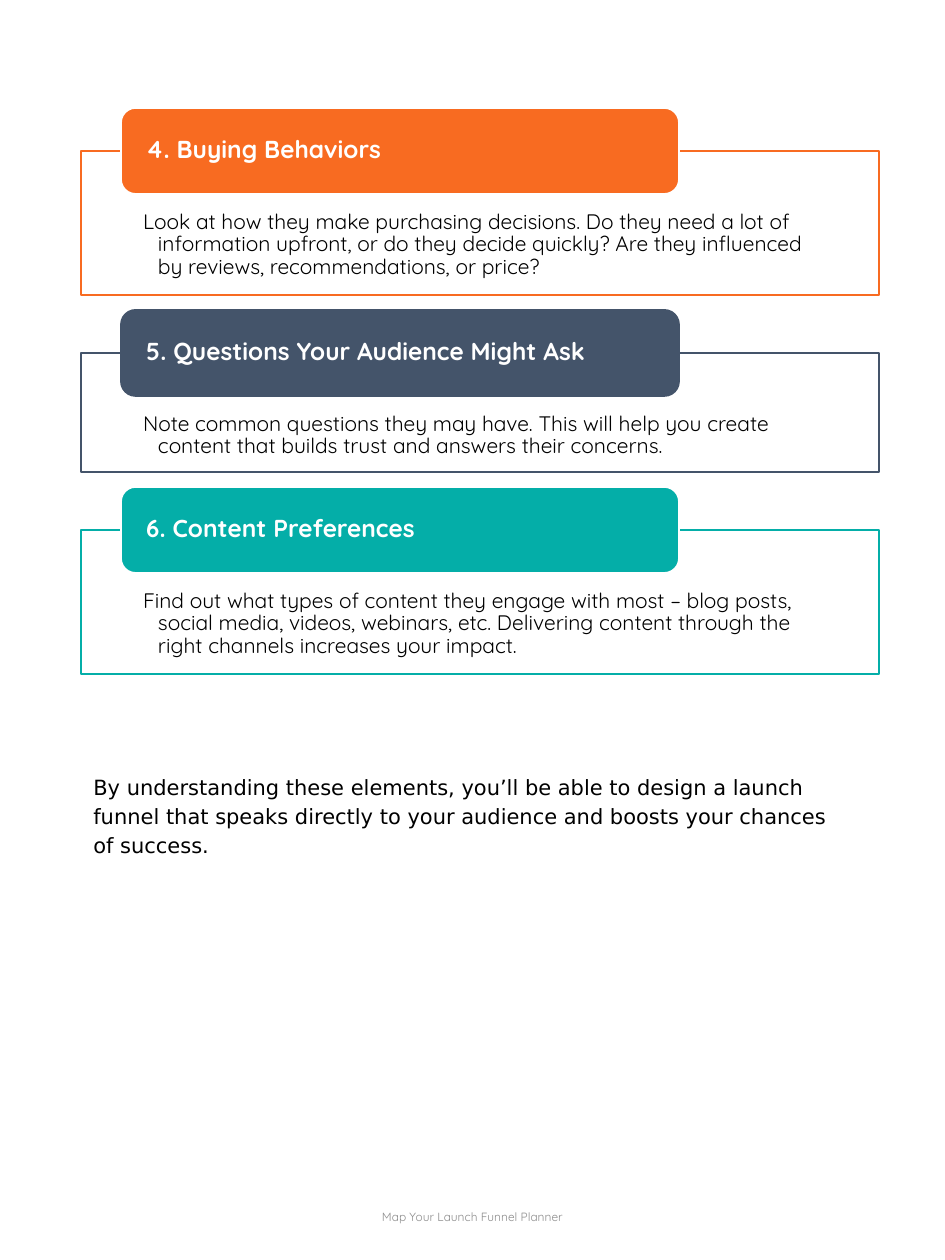
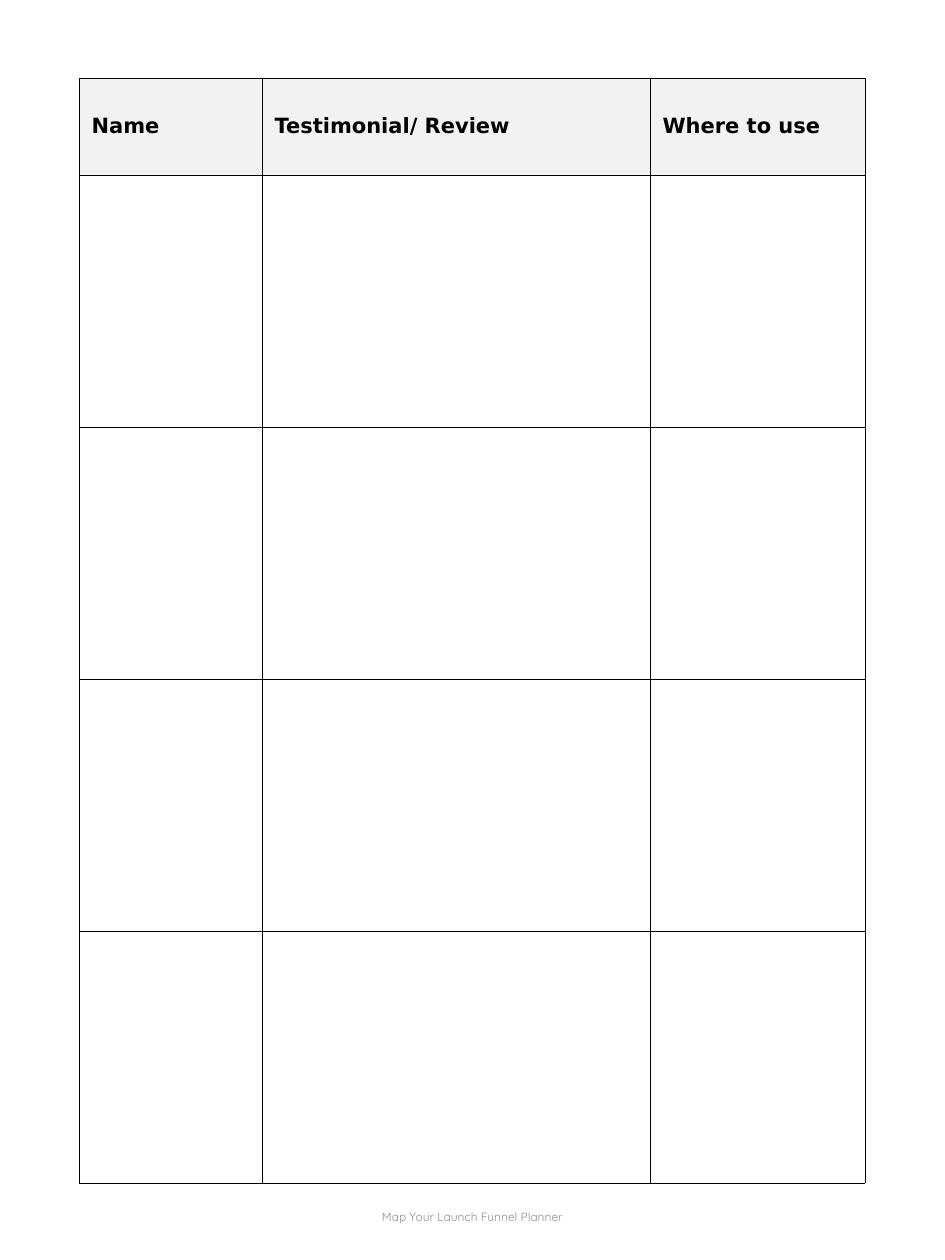
"""Build two pages of a launch funnel planner: audience cards and a testimonial table."""
from dataclasses import dataclass

from lxml.etree import SubElement
from pptx import Presentation
from pptx.dml.color import RGBColor
from pptx.enum.shapes import MSO_SHAPE as Shape
from pptx.enum.text import MSO_ANCHOR as Anchor, MSO_AUTO_SIZE as AutoSize, PP_ALIGN as Align
from pptx.oxml.ns import qn
from pptx.util import Pt


@dataclass(frozen=True)
class Theme:
    black: str = "000000"
    white: str = "FFFFFF"
    footer: str = "8C8C8C"
    header: str = "F2F2F2"
    orange: str = "F86B21"
    navy: str = "44546A"
    teal: str = "04AEA8"
    card_font: str = "Quicksand"
    page_font: str = "DejaVu Sans"
    title_size: float = 14
    body_size: float = 12
    footer_size: float = 6.8


theme = Theme()
rgb = RGBColor.from_string


def px(*lengths):
    """Turn pixel lengths (126 to the inch) into EMU."""
    return [round(length * 914400 / 126) for length in lengths]


def write(frame, text, size, font, color, bold=False, align=Align.LEFT, anchor=Anchor.TOP, insets=None):
    """Fill a text frame with one styled paragraph and return the paragraph."""
    frame.word_wrap = True
    frame.vertical_anchor = anchor
    if insets:
        frame.margin_left, frame.margin_top, frame.margin_right, frame.margin_bottom = px(*insets)
    paragraph = frame.paragraphs[0]
    paragraph.text = text
    paragraph.alignment = align
    paragraph.font.size = Pt(size)
    paragraph.font.name = font
    paragraph.font.bold = bold
    paragraph.font.color.rgb = rgb(color)
    return paragraph


presentation = Presentation()
presentation.slide_width, presentation.slide_height = px(945, 1260)
blank = presentation.slide_layouts[6]
audience_slide, testimonial_slide = [presentation.slides.add_slide(blank) for _ in range(2)]

for slide in (audience_slide, testimonial_slide):
    footer = slide.shapes.add_textbox(*px(313, 1183, 319, 67))
    write(footer.text_frame, "Map Your Launch Funnel Planner", theme.footer_size, theme.card_font,
          theme.footer, align=Align.CENTER, anchor=Anchor.MIDDLE)

cards = [
    ("4. Buying Behaviors",
     "Look at how they make purchasing decisions. Do they need a lot of information upfront, "
     "or do they decide quickly? Are they influenced by reviews, recommendations, or price?",
     144, theme.orange, theme.white),
    ("5. Questions Your Audience Might Ask",
     "Note common questions they may have. This will help you create content that builds trust "
     "and answers their concerns.",
     119, theme.navy, theme.navy),
    ("6. Content Preferences",
     "Find out what types of content they engage with most – blog posts, social media, videos, "
     "webinars, etc. Delivering content through the right channels increases your impact.",
     144, theme.teal, theme.white),
]
card_gap = 58
panel_top = 151
for title, body, panel_height, color, banner_line in cards:
    panel = audience_slide.shapes.add_shape(Shape.RECTANGLE, *px(81, panel_top, 798, panel_height))
    banner = audience_slide.shapes.add_shape(Shape.ROUNDED_RECTANGLE, *px(121, panel_top - 43, 558, 86))
    banner.adjustments[0] = 0.17
    for shape, fill, line in ((panel, theme.white, color), (banner, color, banner_line)):
        shape.shadow.inherit = False
        shape.fill.solid()
        shape.fill.fore_color.rgb = rgb(fill)
        shape.line.color.rgb = rgb(line)
        shape.line.width = Pt(1)
    panel_color = panel.fill._xPr.find(qn("a:solidFill"))[0]
    SubElement(panel_color, qn("a:alpha"), val="90000")

    paragraph = write(panel.text_frame, body, theme.body_size, theme.card_font, theme.black,
                      insets=(62, 60, 62, 11))
    paragraph.line_spacing = 0.9
    properties = paragraph._p.get_or_add_pPr()
    hanging, = px(15)
    properties.set("marL", str(hanging))
    properties.set("indent", str(-hanging))
    paragraph = write(banner.text_frame, title, theme.title_size, theme.card_font, theme.white,
                      bold=True, anchor=Anchor.MIDDLE, insets=(21, 0, 21, 0))
    paragraph.line_spacing = 0.9
    panel_top += panel_height + card_gap

closing = audience_slide.shapes.add_textbox(*px(81, 765, 779, 97))
paragraph = write(
    closing.text_frame,
    "By understanding these elements, you’ll be able to design a launch funnel that speaks "
    "directly to your audience and boosts your chances of success.",
    theme.body_size, theme.page_font, theme.black)
paragraph.line_spacing = 1.15
paragraph.space_after = Pt(12)
closing.text_frame.auto_size = AutoSize.SHAPE_TO_FIT_TEXT

headings = ["Name", "Testimonial/ Review", "Where to use"]
column_widths = [183, 388, 215]
row_heights = [97] + [252] * 4
table = testimonial_slide.shapes.add_table(
    len(row_heights), len(headings), *px(79, 78, sum(column_widths), sum(row_heights))).table
table.first_row = table.horz_banding = False
for column, width in zip(table.columns, px(*column_widths)):
    column.width = width
for row, height in zip(table.rows, px(*row_heights)):
    row.height = height
for cell in table.iter_cells():
    properties = cell._tc.get_or_add_tcPr()
    for side in ("lnL", "lnR", "lnT", "lnB"):
        border = SubElement(properties, qn(f"a:{side}"), w=str(Pt(0.25)))
        SubElement(SubElement(border, qn("a:solidFill")), qn("a:srgbClr"), val=theme.black)
    cell.fill.background()
for cell, heading in zip(table.rows[0].cells, headings):
    cell.fill.solid()
    cell.fill.fore_color.rgb = rgb(theme.header)
    cell.vertical_anchor = Anchor.MIDDLE
    write(cell.text_frame, heading, theme.body_size, theme.page_font, theme.black,
          bold=True, anchor=Anchor.MIDDLE)

presentation.save("out.pptx")
